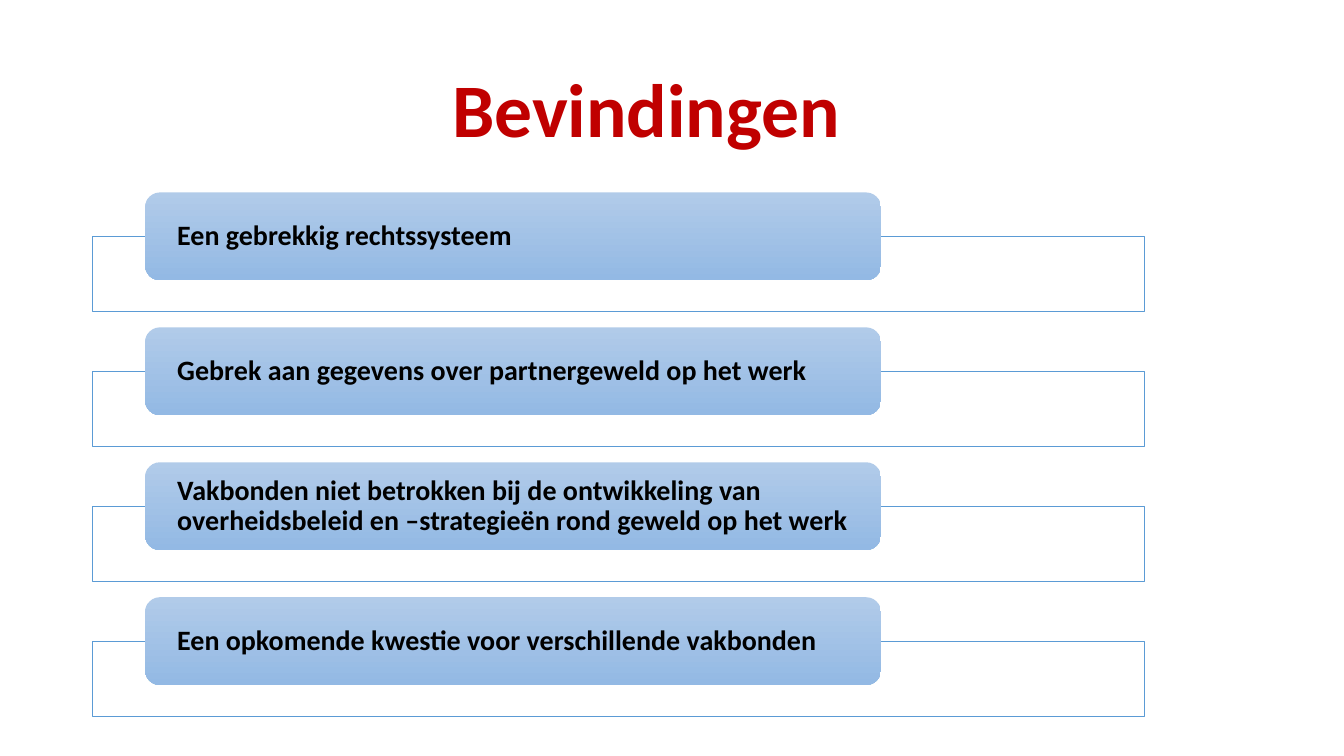
from lxml.etree import SubElement
from pptx import Presentation
from pptx.dml.color import RGBColor as Rgb
from pptx.enum.shapes import MSO_SHAPE as Kind
from pptx.enum.text import MSO_ANCHOR as Anchor, PP_ALIGN as Align
from pptx.oxml.ns import qn
from pptx.util import Cm, Pt

HUES = {
    "title": "C00000",
    "text": "000000",
    "frame": "FFFFFF",
    "line": "5B9BD5",
    "top": "B1CBE9",
    "base": "93B9E4",
}

POINTS = [
    "Een gebrekkig rechtssysteem",
    "Gebrek aan gegevens over partnergeweld op het werk",
    "Vakbonden niet betrokken bij de ontwikkeling van "
    "overheidsbeleid en –strategieën rond geweld op het werk",
    "Een opkomende kwestie voor verschillende vakbonden",
]


def hue(name):
    return Rgb.from_string(HUES[name])


def write(frame, text, size, color, align=Align.LEFT, left=0, right=0, edge=0):
    frame.word_wrap = True
    frame.vertical_anchor = Anchor.MIDDLE
    frame.margin_left, frame.margin_right = Cm(left), Cm(right)
    frame.margin_top = frame.margin_bottom = Cm(edge)
    para = frame.paragraphs[0]
    para.alignment = align
    para.line_spacing = 0.9
    run = para.add_run()
    run.text = text
    font = run.font
    font.name, font.size, font.bold = "Calibri", Pt(size), True
    font.color.rgb = hue(color)


class Deck:
    def __init__(self):
        self.show = Presentation()
        self.show.slide_width, self.show.slide_height = Cm(33.87), Cm(19.05)
        self.slide = self.show.slides.add_slide(self.show.slide_layouts[5])

    def title(self, text, left, top, width, height):
        box = self.slide.shapes.title
        box.left, box.top = Cm(left), Cm(top)
        box.width, box.height = Cm(width), Cm(height)
        write(box.text_frame, text, 54, "title", align=Align.CENTER,
              left=0.25, right=1.57, edge=0.13)

    def shape(self, kind, left, top, width, height):
        item = self.slide.shapes.add_shape(
            kind, Cm(left), Cm(top), Cm(width), Cm(height))
        item.shadow.inherit = False
        return item

    def frame(self, left, top, width, height):
        item = self.shape(Kind.RECTANGLE, left, top, width, height)
        item.fill.solid()
        item.fill.fore_color.rgb = hue("frame")
        tint = item.fill._xPr.find(".//" + qn("a:srgbClr"))
        SubElement(tint, qn("a:alpha"), val="90000")
        item.line.color.rgb = hue("line")
        item.line.width = Pt(0.5)

    def card(self, text, left, top, width, height):
        item = self.shape(Kind.ROUNDED_RECTANGLE, left, top, width, height)
        item.fill.gradient()
        item.fill.gradient_angle = 270
        for stop, name in zip(item.fill.gradient_stops, ("top", "base")):
            stop.color.rgb = hue(name)
        item.line.fill.background()
        write(item.text_frame, text, 20, "text", left=0.7, right=0.7)


def main():
    deck = Deck()
    deck.title("Bevindingen", 2.34, 1.02, 29.21, 3.68)
    for row, text in enumerate(POINTS):
        top = 4.85 + row * 3.4
        deck.frame(2.34, top + 1.1, 26.49, 1.9)
        deck.card(text, 3.66, top, 18.54, 2.21)
    deck.show.save("out.pptx")


if __name__ == "__main__":
    main()
